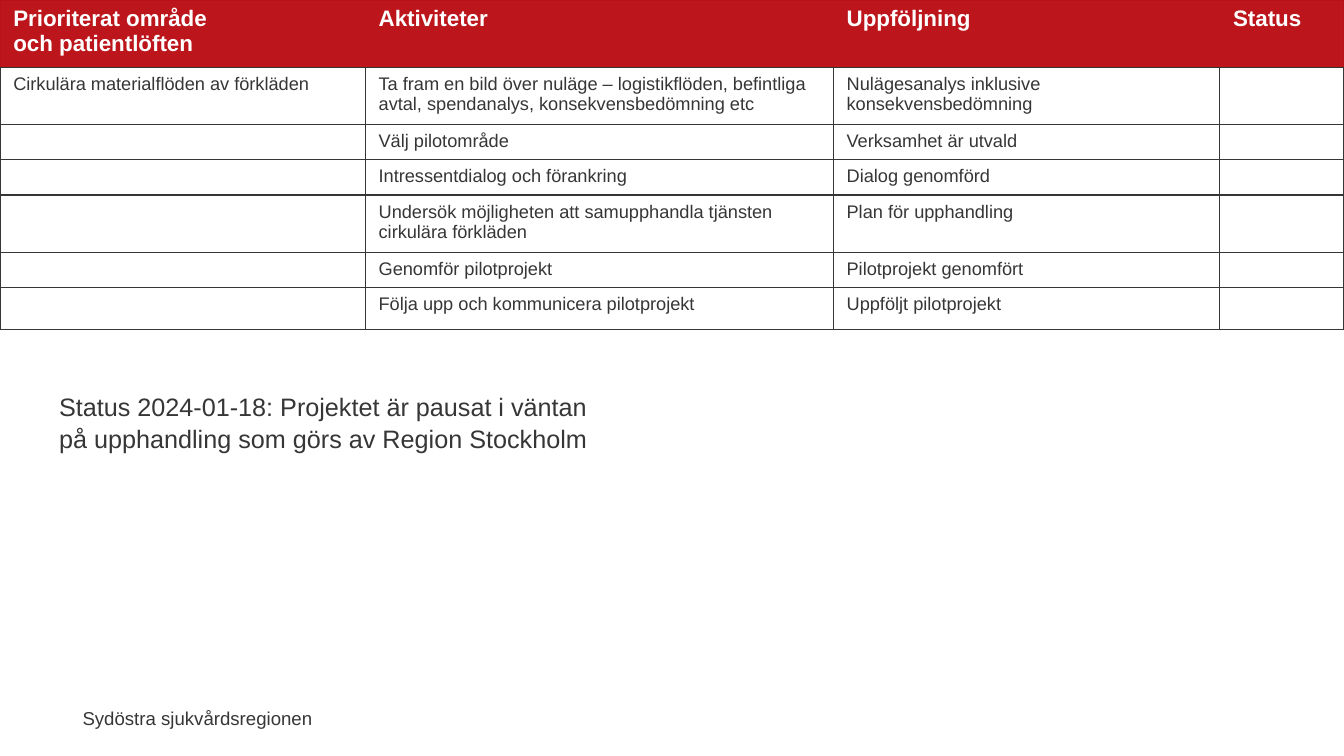
import pptx
import pptx.util
import pptx.dml.color
import pptx.enum.text
from lxml import etree

Pt = pptx.util.Pt
A = "{http://schemas.openxmlformats.org/drawingml/2006/main}"
RED, EDGE, DARK, WHITE = "BC151B", "BC1018", "363636", "FFFFFF"


def style(font, size, color, bold=False):
    font.name, font.size, font.bold = "Arial", Pt(size), bold
    font.color.rgb = pptx.dml.color.RGBColor.from_string(color)


def draw_border(cell, side, color, width):
    """Draw one cell side (L, R, T or B); no color means no line."""
    line = etree.Element(f"{A}ln{side}", w=str(Pt(width)))
    if color:
        fill = etree.SubElement(line, f"{A}solidFill")
        etree.SubElement(fill, f"{A}srgbClr", val=color)
    else:
        etree.SubElement(line, f"{A}noFill")
    cell._tc.get_or_add_tcPr().append(line)


deck = pptx.Presentation()
deck.slide_width, deck.slide_height = Pt(960), Pt(540)
page = deck.slides.add_slide(deck.slide_layouts[6])

# Footer
footer = page.shapes.add_textbox(Pt(50.4), Pt(501.4), Pt(180), Pt(23.7))
footer.text_frame.word_wrap = False
para = footer.text_frame.paragraphs[0]
para.text = "Sydöstra sjukvårdsregionen"
para.alignment = pptx.enum.text.PP_ALIGN.RIGHT
style(para.runs[0].font, 13.3, DARK)

# Activity plan
rows = [
    ["Prioriterat område\voch patientlöften", "Aktiviteter", "Uppföljning", "Status"],
    ["Cirkulära materialflöden av förkläden",
     "Ta fram en bild över nuläge – logistikflöden, befintliga avtal, "
     "spendanalys, konsekvensbedömning etc",
     "Nulägesanalys inklusive konsekvensbedömning", ""],
    ["", "Välj pilotområde", "Verksamhet är utvald", ""],
    ["", "Intressentdialog och förankring", "Dialog genomförd", ""],
    ["", "Undersök möjligheten att samupphandla tjänsten cirkulära förkläden",
     "Plan för upphandling", ""],
    ["", "Genomför pilotprojekt", "Pilotprojekt genomfört", ""],
    ["", "Följa upp och kommunicera pilotprojekt", "Uppföljt pilotprojekt", ""],
]
widths = [261, 334.3, 276, 88.7]
heights = [48, 40.8, 25.1, 25.1, 40.8, 25.1, 29.9]
plan = page.shapes.add_table(len(rows), len(widths), 0, 0,
                             Pt(sum(widths)), Pt(sum(heights))).table
for column, width in zip(plan.columns, widths):
    column.width = Pt(width)
for r, (texts, height) in enumerate(zip(rows, heights)):
    plan.rows[r].height = Pt(height)
    header = r == 0
    for c, text in enumerate(texts):
        cell = plan.cell(r, c)
        cell.margin_left = cell.margin_right = Pt(9.5)
        cell.margin_top = cell.margin_bottom = Pt(4.8)
        for side in "LRTB":
            outer = side == "T" or (side, c) in [("L", 0), ("R", len(widths) - 1)]
            if not header or side == "B":
                draw_border(cell, side, DARK, 1)
            else:
                draw_border(cell, side, EDGE if outer else None, 0.75)
        if header:
            cell.fill.solid()
            cell.fill.fore_color.rgb = pptx.dml.color.RGBColor.from_string(RED)
        else:
            cell.fill.background()
        cell.text_frame.text = text
        para = cell.text_frame.paragraphs[0]
        for span in para.runs:
            style(span.font, 16 if header else 13, WHITE if header else DARK, header)
        if not text:
            # An empty cell still needs the small size, or its row grows
            etree.SubElement(para._p, f"{A}endParaRPr", sz="1300")

# Project status
status = page.shapes.add_textbox(Pt(35.1), Pt(275), Pt(411.8), Pt(51.1))
status.text_frame.word_wrap = True
para = status.text_frame.paragraphs[0]
para.text = ("Status 2024-01-18: Projektet är pausat i väntan "
             "på upphandling som görs av Region Stockholm")
para.line_spacing = 1.05
style(para.runs[0].font, 18, DARK)

deck.save("out.pptx")
